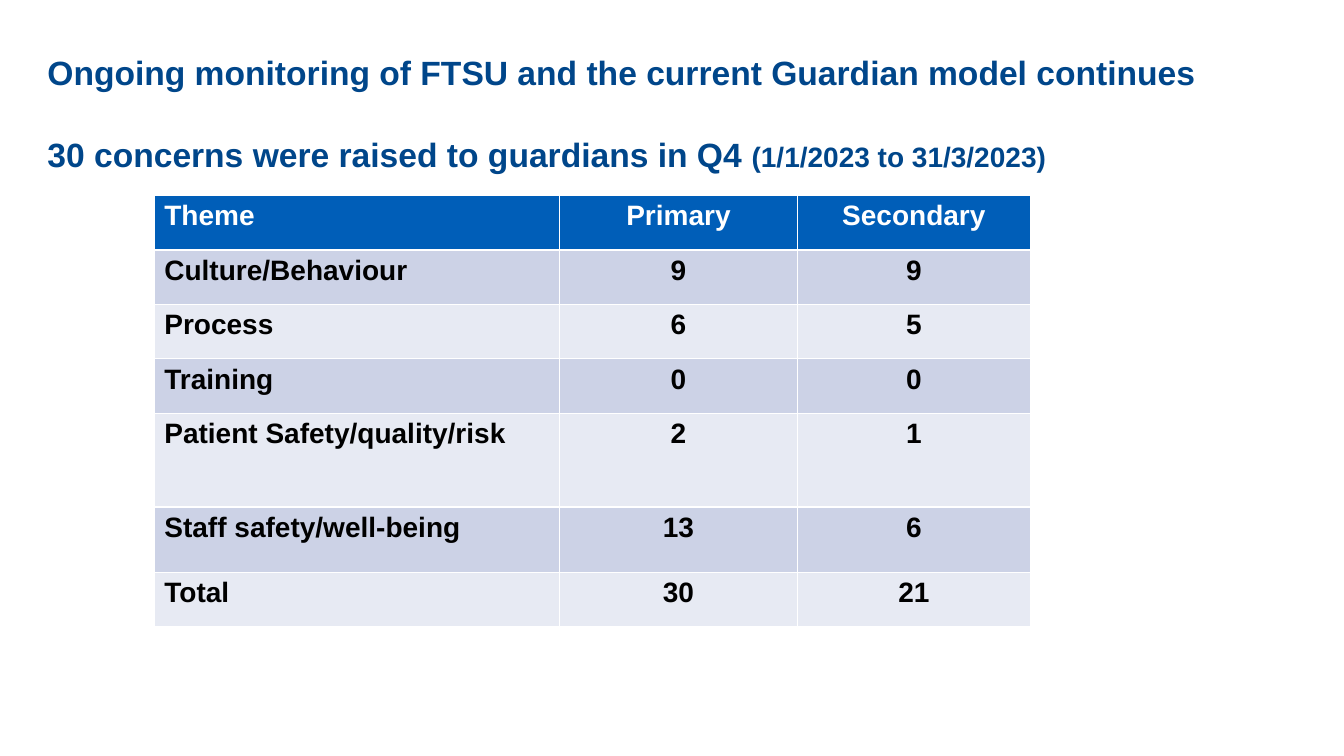
from pptx import Presentation
from pptx.dml.color import RGBColor
from pptx.enum.text import MSO_ANCHOR, PP_ALIGN as Align
from pptx.util import Inches, Pt

TITLE_BLUE = RGBColor(0x00, 0x46, 0x8A)
HEADER_BLUE = RGBColor(0x00, 0x5E, 0xB8)
BAND_DARK = RGBColor(0xCC, 0xD2, 0xE6)
BAND_LIGHT = RGBColor(0xE7, 0xEA, 0xF3)
WHITE = RGBColor(0xFF, 0xFF, 0xFF)
BLACK = RGBColor(0x00, 0x00, 0x00)

TITLE_LINES = [
    [("Ongoing monitoring of FTSU and the current Guardian model continues", 24)],
    [("30 concerns were raised to guardians in Q4 ", 24),
     ("(1/1/2023 to 31/3/2023)", 20)],
]
CONCERNS = [
    ("Theme", "Primary", "Secondary"),
    ("Culture/Behaviour", 9, 9),
    ("Process", 6, 5),
    ("Training", 0, 0),
    ("Patient Safety/quality/risk", 2, 1),
    ("Staff safety/well-being", 13, 6),
    ("Total", 30, 21),
]
COLUMN_WIDTHS = [4.02, 2.36, 2.31]
ROW_HEIGHTS = [0.54, 0.54, 0.54, 0.54, 0.93, 0.65, 0.54]


def set_attributes(target, values):
    for name, value in values.items():
        setattr(target, name, value)


def add_run(paragraph, text, size, color):
    run = paragraph.add_run()
    run.text = text
    set_attributes(run.font, {"name": "Arial", "size": Pt(size), "bold": True})
    run.font.color.rgb = color


def add_title(slide):
    box = slide.shapes.add_textbox(
        Inches(0.47), Inches(0.56), Inches(11.68), Inches(1.12))
    frame = box.text_frame
    set_attributes(frame, {
        "word_wrap": True,
        "vertical_anchor": MSO_ANCHOR.MIDDLE,
        "margin_left": 0,
    })
    for index, line in enumerate(TITLE_LINES):
        paragraph = frame.add_paragraph() if index else frame.paragraphs[0]
        if index:
            paragraph.space_before = Pt(29.5)
        for text, size in line:
            add_run(paragraph, text, size, TITLE_BLUE)


def fill_cell(cell, text, fill, color, alignment):
    cell.fill.solid()
    cell.fill.fore_color.rgb = fill
    paragraph = cell.text_frame.paragraphs[0]
    paragraph.alignment = alignment
    add_run(paragraph, text, 20, color)


def add_concerns_table(slide):
    """Add the themes table; its default style supplies the white borders."""
    table = slide.shapes.add_table(
        len(CONCERNS), len(COLUMN_WIDTHS), Inches(1.53), Inches(1.94),
        Inches(sum(COLUMN_WIDTHS)), Inches(sum(ROW_HEIGHTS))).table
    for column, width in zip(table.columns, COLUMN_WIDTHS):
        column.width = Inches(width)
    for row, height in zip(table.rows, ROW_HEIGHTS):
        row.height = Inches(height)
    for row_index, values in enumerate(CONCERNS):
        band = BAND_DARK if row_index % 2 else BAND_LIGHT
        fill, color = (band, BLACK) if row_index else (HEADER_BLUE, WHITE)
        for column_index, value in enumerate(values):
            alignment = Align.CENTER if column_index else Align.LEFT
            fill_cell(table.cell(row_index, column_index), str(value),
                      fill, color, alignment)


def main():
    presentation = Presentation()
    set_attributes(presentation, {
        "slide_width": Inches(13.33), "slide_height": Inches(7.5)})
    slide = presentation.slides.add_slide(presentation.slide_layouts[6])
    add_title(slide)
    add_concerns_table(slide)
    presentation.save("out.pptx")


if __name__ == "__main__":
    main()
